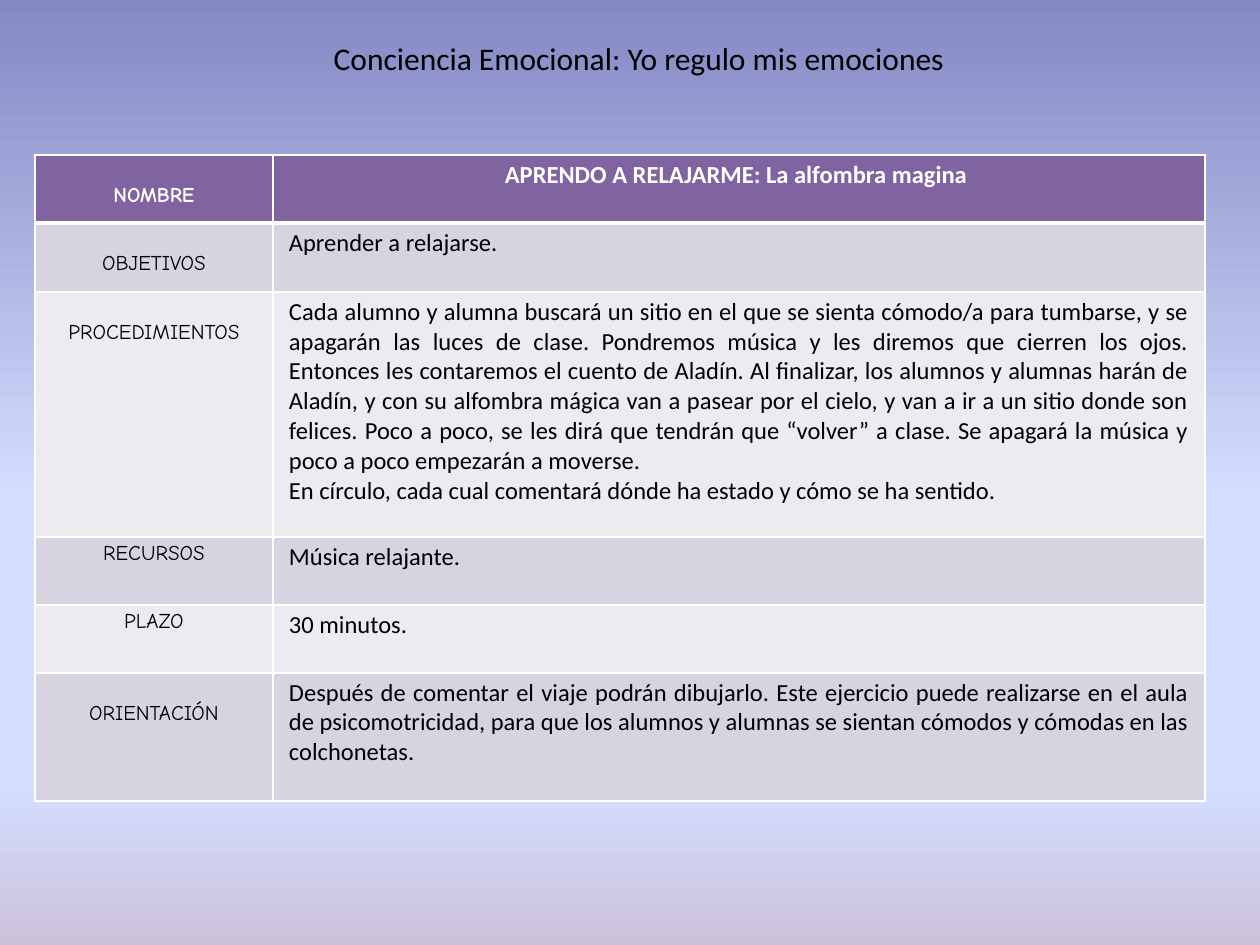
from lxml import etree
from pptx import Presentation
from pptx.dml.color import RGBColor
from pptx.enum.text import MSO_AUTO_SIZE, PP_ALIGN
from pptx.oxml.ns import qn
from pptx.util import Inches, Pt

CENTER, JUSTIFY = PP_ALIGN.CENTER, PP_ALIGN.JUSTIFY
FIT_SHAPE = MSO_AUTO_SIZE.SHAPE_TO_FIT_TEXT

PX_PER_INCH = 126
BLACK = RGBColor(0x00, 0x00, 0x00)
WHITE = RGBColor(0xFF, 0xFF, 0xFF)
PURPLE = RGBColor(0x80, 0x64, 0xA2)
BANDS = (RGBColor(0xED, 0xEA, 0xF0), RGBColor(0xD8, 0xD3, 0xE0))
SKY = (
    (0, RGBColor(0x84, 0x88, 0xC4)),
    (53, RGBColor(0xD4, 0xDE, 0xFF)),
    (83, RGBColor(0xD4, 0xDE, 0xFF)),
    (100, RGBColor(0xCC, 0xC1, 0xDA)),
)
BODY_FONT, LABEL_FONT = "Calibri", "Comic Neue"
COLUMNS = (238, 932)
SIDE_INSET, TOP_INSET, LABEL_DROP = 16, 5, 24

ROWS = (
    (68, LABEL_DROP, "NOMBRE", ("APRENDO A RELAJARME: La alfombra magina ",)),
    (69, LABEL_DROP, "OBJETIVOS", ("Aprender a relajarse.",)),
    (245, LABEL_DROP, "PROCEDIMIENTOS", (
        "Cada alumno y alumna buscará un sitio en el que se sienta cómodo/a para "
        "tumbarse, y se apagarán las luces de clase. Pondremos música y les diremos "
        "que cierren los ojos. Entonces les contaremos el cuento de Aladín. Al "
        "finalizar, los alumnos y alumnas harán de Aladín, y con su alfombra mágica "
        "van a pasear por el cielo, y van a ir a un sitio donde son felices. Poco a "
        "poco, se les dirá que tendrán que “volver” a clase. Se apagará la música y "
        "poco a poco empezarán a moverse. ",
        "En círculo, cada cual comentará dónde ha estado y cómo se ha sentido.",
    )),
    (68, 0, "RECURSOS", ("Música relajante.",)),
    (68, 0, "PLAZO", ("30 minutos.",)),
    (128, LABEL_DROP, "ORIENTACIÓN", (
        "Después de comentar el viaje podrán dibujarlo. Este ejercicio puede "
        "realizarse en el aula de psicomotricidad, para que los alumnos y alumnas "
        "se sientan cómodos y cómodas en las colchonetas.",
    )),
)


def px(length):
    """Turn pixels into EMU."""
    return Inches(length / PX_PER_INCH)


def paint_background(page, stops):
    """Fill the page with a gradient that runs from top to bottom."""
    fill = page.background.fill
    fill.gradient()
    fill.gradient_angle = 270
    stop_list = next(page.element.iter(qn("a:gsLst")))
    for stop in list(stop_list):
        stop_list.remove(stop)
    for percent, color in stops:
        stop = etree.SubElement(stop_list, qn("a:gs"), pos=str(percent * 1000))
        etree.SubElement(stop, qn("a:srgbClr"), val=str(color))


def write_text(frame, texts, font, size, color, align, bold=False):
    """Write each text as one paragraph of the frame."""
    for index, text in enumerate(texts):
        para = frame.add_paragraph() if index else frame.paragraphs[0]
        para.alignment = align
        span = para.add_run()
        span.text = text
        span.font.name = font
        span.font.size = Pt(size)
        span.font.bold = bold
        span.font.color.rgb = color


def add_title(page, text):
    """Add the centred title of the page."""
    box = page.shapes.add_textbox(px(292), px(33), px(694), px(50))
    box.text_frame.word_wrap = True
    box.text_frame.auto_size = FIT_SHAPE
    write_text(box.text_frame, (text,), BODY_FONT, 18, BLACK, CENTER)


def style_cell(cell, fill, drop, bottom_width):
    """Set the insets, white borders and fill of a cell."""
    cell.margin_left = cell.margin_right = px(SIDE_INSET)
    cell.margin_top = px(TOP_INSET + drop)
    cell.margin_bottom = px(TOP_INSET)
    properties = cell._tc.get_or_add_tcPr()
    for side, width in (("L", 1), ("R", 1), ("T", 1), ("B", bottom_width)):
        line = etree.SubElement(properties, qn(f"a:ln{side}"), w=str(Pt(width)))
        solid = etree.SubElement(line, qn("a:solidFill"))
        etree.SubElement(solid, qn("a:srgbClr"), val=str(WHITE))
    cell.fill.solid()
    cell.fill.fore_color.rgb = fill


def add_activity_table(page):
    """Add the table that describes the activity."""
    height = sum(row[0] for row in ROWS)
    table = page.shapes.add_table(
        len(ROWS), len(COLUMNS), px(35), px(155), px(sum(COLUMNS)), px(height)
    ).table
    for column, width in zip(table.columns, COLUMNS):
        column.width = px(width)
    for index, (height, drop, label, texts) in enumerate(ROWS):
        header = index == 0
        table.rows[index].height = px(height)
        fill = PURPLE if header else BANDS[index % 2]
        color = WHITE if header else BLACK
        align = CENTER if header else JUSTIFY
        label_cell, text_cell = table.cell(index, 0), table.cell(index, 1)
        for cell, cell_drop in ((label_cell, drop), (text_cell, 0)):
            style_cell(cell, fill, cell_drop, 3 if header else 1)
        write_text(label_cell.text_frame, (label,), LABEL_FONT, 12, color, CENTER, header)
        write_text(text_cell.text_frame, texts, BODY_FONT, 14, color, align, header)


def main():
    """Build the slide and save it."""
    deck = Presentation()
    deck.slide_width, deck.slide_height = px(1260), px(945)
    page = deck.slides.add_slide(deck.slide_layouts[6])
    paint_background(page, SKY)
    add_title(page, "Conciencia Emocional: Yo regulo mis emociones")
    add_activity_table(page)
    deck.save("out.pptx")


if __name__ == "__main__":
    main()
